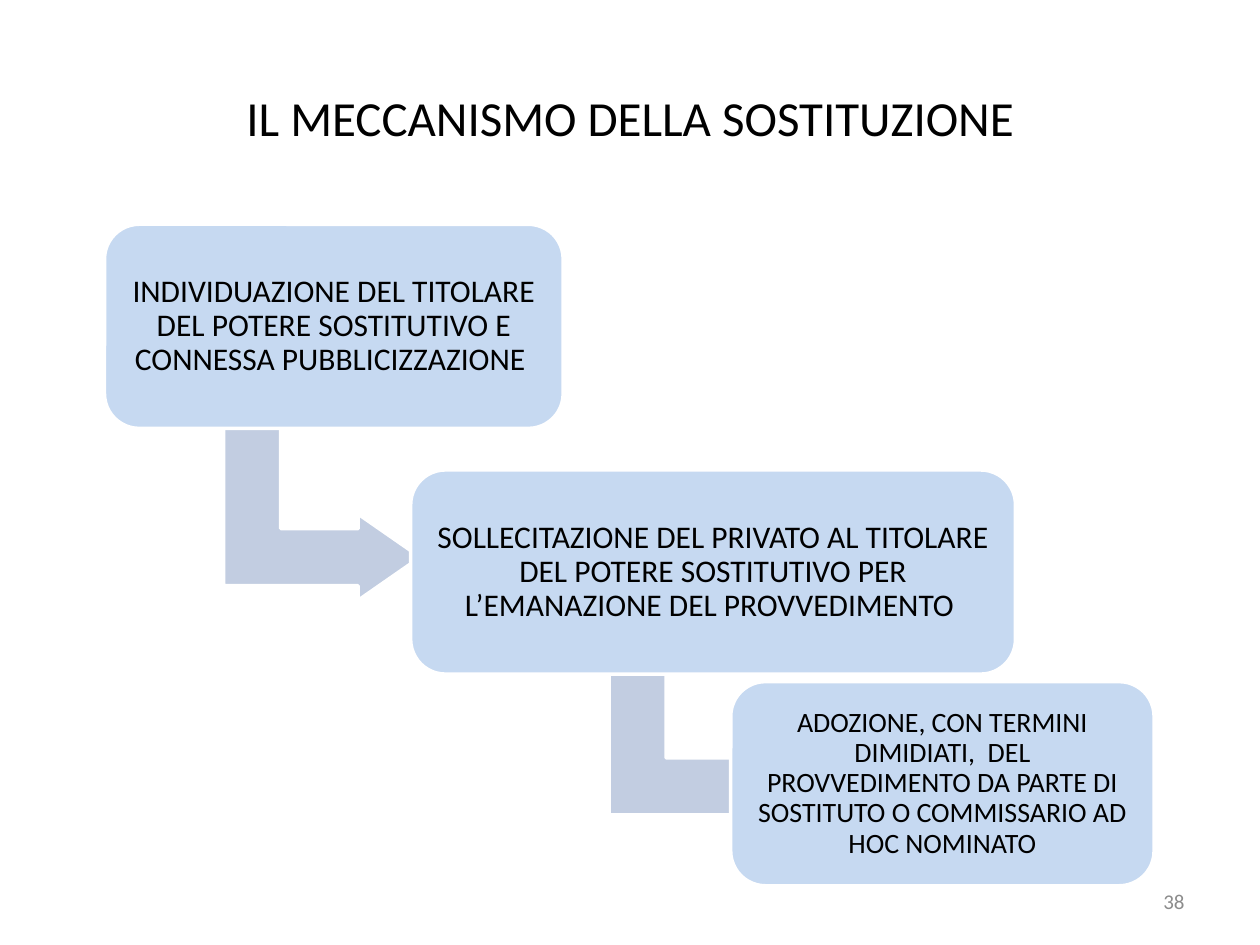
from pptx import Presentation
from pptx.dml.color import RGBColor
from pptx.enum.shapes import MSO_SHAPE
from pptx.enum.text import MSO_ANCHOR, PP_ALIGN
from pptx.util import Inches, Pt

BLACK = RGBColor(0x00, 0x00, 0x00)
WHITE = RGBColor(0xFF, 0xFF, 0xFF)
GREY = RGBColor(0x8C, 0x8C, 0x8C)
PALE_BLUE = RGBColor(0xC6, 0xD9, 0xF1)
ARROW_BLUE = RGBColor(0xC2, 0xCD, 0xE1)

STEP_ROWS = 16.2
STEPS = [
    (8.3, 17.8, 36.4, 18,
     "INDIVIDUAZIONE DEL TITOLARE DEL POTERE SOSTITUTIVO E CONNESSA PUBBLICIZZAZIONE "),
    (32.6, 37.3, 48, 18,
     "SOLLECITAZIONE DEL PRIVATO AL TITOLARE DEL POTERE SOSTITUTIVO PER L’EMANAZIONE DEL PROVVEDIMENTO "),
    (58, 54.1, 33.6, 16,
     "ADOZIONE, CON TERMINI DIMIDIATI,  DEL PROVVEDIMENTO DA PARTE DI SOSTITUTO O COMMISSARIO AD HOC NOMINATO"),
]
ARROWS = [(18.7, 33), (49.3, 51.2)]


class StairSlide:
    """Draws styled elements on a grid of 100 columns by 75 rows."""

    font = "Calibri"
    columns, rows = 100, 75

    def __init__(self, deck):
        self.slide = deck.slides.add_slide(deck.slide_layouts[6])
        self.column = deck.slide_width / self.columns
        self.row = deck.slide_height / self.rows

    def place(self, left, top, width, height):
        return (round(left * self.column), round(top * self.row),
                round(width * self.column), round(height * self.row))

    def set_text(self, box, text, size, color, align):
        frame = box.text_frame
        frame.word_wrap = True
        frame.vertical_anchor = MSO_ANCHOR.MIDDLE
        frame.text = text
        para = frame.paragraphs[0]
        para.alignment = align
        span = para.runs[0]
        span.font.name = self.font
        span.font.size = Pt(size)
        span.font.color.rgb = color
        return frame

    def label(self, place, text, size, color=BLACK, align=PP_ALIGN.CENTER):
        box = self.slide.shapes.add_textbox(*self.place(*place))
        self.set_text(box, text, size, color, align)

    def shape(self, kind, place, fill, adjustments):
        shape = self.slide.shapes.add_shape(kind, *self.place(*place))
        shape.shadow.inherit = False
        shape.fill.solid()
        shape.fill.fore_color.rgb = fill
        shape.line.color.rgb = WHITE
        shape.line.width = Pt(2)
        for index, value in enumerate(adjustments):
            shape.adjustments[index] = value
        return shape

    def arrow(self, left, top):
        arrow = self.shape(MSO_SHAPE.BENT_UP_ARROW, (left, top, 13.7, 15.6),
                           ARROW_BLUE, (0.33, 0.25, 0.36))
        arrow.rotation = 90

    def step(self, left, top, width, size, text):
        box = self.shape(MSO_SHAPE.ROUNDED_RECTANGLE,
                         (left, top, width, STEP_ROWS), PALE_BLUE, (0.17,))
        frame = self.set_text(box, text, size, BLACK, PP_ALIGN.CENTER)
        frame.margin_left = frame.margin_right = Inches(0.07)
        frame.margin_top = frame.margin_bottom = Inches(0.07)
        frame.paragraphs[0].line_spacing = 0.9


def main():
    deck = Presentation()
    deck.slide_width, deck.slide_height = Inches(10), Inches(7.5)
    page = StairSlide(deck)
    page.label((5, 3, 90, 12.5), "IL MECCANISMO DELLA SOSTITUZIONE", 28)
    for arrow in ARROWS:
        page.arrow(*arrow)
    for step in STEPS:
        page.step(*step)
    page.label((71.7, 69.5, 23.3, 4), "38", 12, GREY, PP_ALIGN.RIGHT)
    deck.save("out.pptx")


if __name__ == "__main__":
    main()
